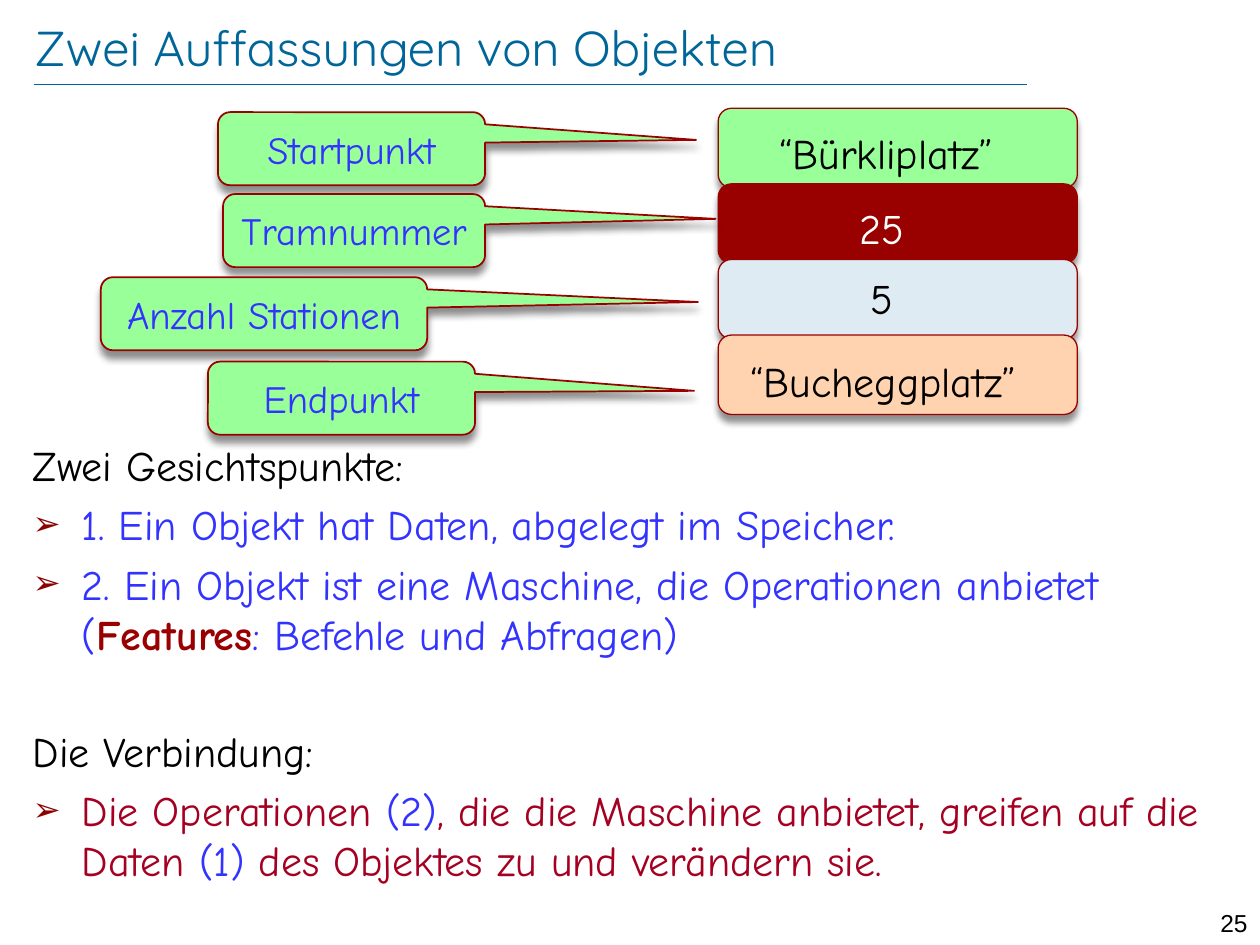
from pptx import Presentation
from pptx.dml.color import RGBColor
from pptx.enum.shapes import MSO_CONNECTOR, MSO_SHAPE
from pptx.enum.text import MSO_ANCHOR, MSO_AUTO_SIZE, PP_ALIGN
from pptx.oxml import parse_xml
from pptx.oxml.ns import nsdecls
from pptx.util import Inches, Pt

BLUE, RED, GREEN, BLACK, WHITE = "3333FF", "990000", "99FF99", "000000", "FFFFFF"
CRIMSON, TITLE = "A50021", "006699"


def rgb(value):
    return RGBColor.from_string(value)


def element(tag, attributes="", content=""):
    return parse_xml(f"<a:{tag} {nsdecls('a')} {attributes}>{content}</a:{tag}>")


class SlideBuilder:
    font, size = "Comic Neue", 24

    def __init__(self, prs):
        self.s = prs.slides.add_slide(prs.slide_layouts[1])

    def place(self, sp, box):
        sp.left, sp.top, sp.width, sp.height = map(Inches, box)

    def style(self, r, color, size=None, font=None, bold=False):
        r.font.name = font or self.font
        r.font.size = Pt(size or self.size)
        r.font.bold = bold
        r.font.color.rgb = rgb(color)

    def set_text(self, sp, text, color, align, size=None, font=None):
        tf = sp.text_frame
        tf.word_wrap = True
        tf.text = text
        p = tf.paragraphs[0]
        p.alignment = align
        self.style(p.runs[0], color, size, font)
        return tf

    def title(self, text, box):
        sp = self.s.shapes.title
        self.place(sp, box)
        tf = self.set_text(sp, text, TITLE, PP_ALIGN.LEFT, 28, "Quicksand")
        tf.auto_size = MSO_AUTO_SIZE.NONE
        tf.vertical_anchor = MSO_ANCHOR.MIDDLE
        tf.margin_left = tf.margin_right = tf.margin_top = tf.margin_bottom = 0

    def rule(self, x1, x2, y):
        line = self.s.shapes.add_connector(
            MSO_CONNECTOR.STRAIGHT, Inches(x1), Inches(y), Inches(x2), Inches(y))
        line.line.color.rgb = rgb(TITLE)
        line.line.width = Pt(0.25)
        line._element.spPr.append(element("effectLst"))

    def shape(self, kind, box, fill, width):
        sp = self.s.shapes.add_shape(kind, *map(Inches, box))
        sp.fill.solid()
        sp.fill.fore_color.rgb = rgb(fill)
        sp.line.color.rgb = rgb(RED)
        sp.line.width = Pt(width)
        sp._element.spPr.append(element(
            "effectLst", content=f'<a:outerShdw blurRad="{Pt(4)}" dist="{Pt(4)}" dir="5400000"'
            ' rotWithShape="0"><a:srgbClr val="000000"><a:alpha val="43000"/></a:srgbClr>'
            '</a:outerShdw>'))
        return sp

    def label(self, text, box, color=BLACK, align=PP_ALIGN.LEFT, size=None, font=None):
        sp = self.s.shapes.add_textbox(*map(Inches, box))
        self.set_text(sp, text, color, align, size, font)

    def callout(self, text, box, tip):
        sp = self.shape(MSO_SHAPE.ROUNDED_RECTANGULAR_CALLOUT, box, GREEN, 1)
        for i, value in enumerate((*tip, 0.167)):
            sp.adjustments[i] = value
        tf = self.set_text(sp, text, BLUE, PP_ALIGN.CENTER, 22)
        tf.vertical_anchor = MSO_ANCHOR.MIDDLE
        tf.margin_left = tf.margin_right = 0

    def body(self, box, items):
        sp = self.s.placeholders[1]
        self.place(sp, box)
        tf = sp.text_frame
        tf.auto_size = MSO_AUTO_SIZE.NONE
        for i, (bullet, space, runs) in enumerate(items):
            p = tf.paragraphs[0] if i == 0 else tf.add_paragraph()
            pPr = p._p.get_or_add_pPr()
            pPr.set("marL", str(Inches(0.39)))
            pPr.set("indent", str(-Inches(0.39)))
            if bullet:
                pPr.append(element("buClr", content='<a:srgbClr val="8B0000"/>'))
                pPr.append(element("buSzPct", 'val="80000"'))
                pPr.append(element("buChar", 'char="➢"'))
            else:
                pPr.append(element("buNone"))
            p.space_before = Pt(space)
            for text, color in runs:
                r = p.add_run()
                r.text = text
                self.style(r, color, bold=color == RED)


def main():
    prs = Presentation()
    prs.slide_width, prs.slide_height = Inches(10), Inches(7.5)
    b = SlideBuilder(prs)
    b.rule(0.27, 8.15, 0.67)
    b.label("25", (9.45, 7.16, 0.55, 0.24), BLACK, PP_ALIGN.RIGHT, 14, "Arial")
    b.title("Zwei Auffassungen von Objekten", (0.27, 0.13, 8.69, 0.48))

    for i, fill in enumerate((GREEN, RED, "DFEBF3", "FFD3AF")):
        b.shape(MSO_SHAPE.ROUNDED_RECTANGLE, (5.7, 0.86 + 0.6 * i, 2.85, 0.63), fill, 0.75)
    b.label("“Bürkliplatz”", (6.09, 0.96, 2.44, 0.5))
    b.label("“Bucheggplatz”", (5.86, 2.77, 2.68, 0.5))
    b.label("25", (5.78, 1.56, 2.44, 0.5), WHITE, PP_ALIGN.CENTER)
    b.label("5", (5.78, 2.11, 2.44, 0.5), BLACK, PP_ALIGN.CENTER)

    for text, x, y, width, tip in (
        ("Startpunkt", 1.73, 0.89, 2.12, (1.29, -0.12)),
        ("Tramnummer", 1.77, 1.54, 2.08, (1.38, -0.16)),
        ("Anzahl Stationen", 0.8, 2.2, 2.59, (1.33, -0.16)),
        ("Endpunkt", 1.65, 2.87, 2.12, (1.32, -0.1)),
    ):
        b.callout(text, (x, y, width, 0.58), tip)

    b.body((0.16, 3.44, 9.59, 3.69), (
        (False, 0, [("Zwei Gesichtspunkte:", BLACK)]),
        (True, 5, [("1. Ein Objekt hat Daten, abgelegt im Speicher.", BLUE)]),
        (True, 5, [("2. Ein Objekt ist eine Maschine, die Operationen anbietet (", BLUE),
                   ("Features", RED), (": Befehle und Abfragen)", BLUE)]),
        (False, 38, [("Die Verbindung:", BLACK)]),
        (True, 5, [("Die Operationen ", CRIMSON), ("(2)", BLUE),
                   (", die die Maschine anbietet, greifen auf die Daten ", CRIMSON),
                   ("(1)", BLUE), (" des Objektes zu und verändern sie.", CRIMSON)]),
    ))
    prs.save("out.pptx")


if __name__ == "__main__":
    main()
